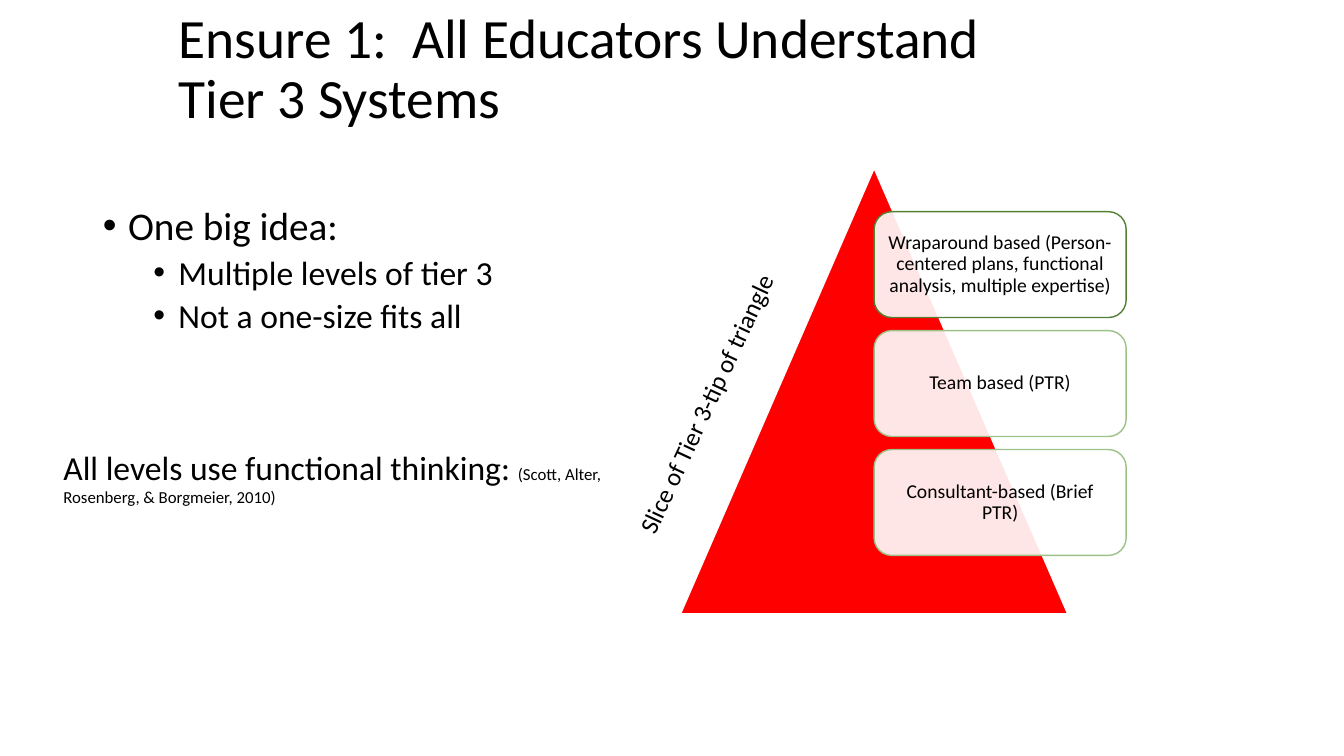
import lxml.etree
import pptx
import pptx.util
import pptx.dml.color
import pptx.enum.shapes
import pptx.enum.text
import pptx.oxml.ns

Inches, Pt = pptx.util.Inches, pptx.util.Pt
RGBColor = pptx.dml.color.RGBColor
Shape = pptx.enum.shapes.MSO_SHAPE
Anchor = pptx.enum.text.MSO_ANCHOR
Align = pptx.enum.text.PP_ALIGN
Fit = pptx.enum.text.MSO_AUTO_SIZE
qn = pptx.oxml.ns.qn

BLACK = RGBColor(0, 0, 0)
WHITE = RGBColor(255, 255, 255)
RED = RGBColor(255, 0, 0)
DARK = RGBColor(0x53, 0x80, 0x35)
LIGHT = RGBColor(0x9C, 0xC1, 0x89)

POINTS = [("One big idea:", 0), ("Multiple levels of tier 3", 1),
          ("Not a one-size fits all", 1)]
TIERS = [("Wraparound based (Person-centered plans, functional analysis, "
          "multiple expertise)", DARK),
         ("Team based (PTR)", LIGHT),
         ("Consultant-based (Brief PTR)", LIGHT)]


def place(shape, box):
    shape.left, shape.top, shape.width, shape.height = map(Inches, box)


def dress(run, size):
    run.font.name = "Calibri"
    run.font.size = Pt(size)
    run.font.color.rgb = BLACK


def style(para, size):
    para.line_spacing = 0.9
    for run in para.runs:
        dress(run, size)


def bullet(para, left):
    props = para._p.get_or_add_pPr()
    props.set("marL", str(Inches(left)))
    props.set("indent", str(Inches(-0.25)))
    lxml.etree.SubElement(props, qn("a:buFont"), typeface="Arial")
    lxml.etree.SubElement(props, qn("a:buChar"), char="•")


def add_title(slide, box):
    title = slide.shapes.title
    place(title, box)
    frame = title.text_frame
    frame.text = "Ensure 1:  All Educators Understand Tier 3 Systems"
    frame.auto_size = Fit.NONE
    frame.vertical_anchor = Anchor.MIDDLE
    para = frame.paragraphs[0]
    para.alignment = Align.LEFT
    style(para, 39.6)


def add_list(slide, box):
    body = slide.placeholders[1]
    place(body, box)
    frame = body.text_frame
    frame.text = "\n".join(text for text, _ in POINTS)
    frame.auto_size = Fit.NONE
    for para, (_, level) in zip(frame.paragraphs, POINTS):
        para.level = level
        para.space_before = Pt(5 if level else 10)
        style(para, 24 if level else 28)
        bullet(para, 0.25 + 0.5 * level)


def add_form(slide, kind, box, fill, line):
    form = slide.shapes.add_shape(kind, *map(Inches, box))
    form.shadow.inherit = False
    form.fill.solid()
    form.fill.fore_color.rgb = fill
    form.line.color.rgb = line
    form.line.width = Pt(1)
    return form


def add_tier(slide, box, text, line):
    tier = add_form(slide, Shape.ROUNDED_RECTANGLE, box, WHITE, line)
    # Let the triangle show faintly through the card
    fill = tier._element.spPr.find(qn("a:solidFill"))
    lxml.etree.SubElement(fill[0], qn("a:alpha"), val="90000")
    frame = tier.text_frame
    frame.text = text
    frame.word_wrap = True
    frame.vertical_anchor = Anchor.MIDDLE
    frame.margin_left = frame.margin_right = Inches(0.08)
    frame.margin_top = frame.margin_bottom = Inches(0.08)
    para = frame.paragraphs[0]
    para.alignment = Align.CENTER
    style(para, 14)


def add_peak(slide, box):
    left, top, width, height = box
    add_form(slide, Shape.ISOSCELES_TRIANGLE, box, RED, WHITE)
    # Cards start at the middle of the triangle
    for row, (text, line) in enumerate(TIERS):
        card = (left + width / 2, top + 0.43 + row * 1.18, 2.5, 1.05)
        add_tier(slide, card, text, line)


def add_note(slide, box, parts, turn=0):
    note = slide.shapes.add_textbox(*map(Inches, box))
    note.rotation = turn
    frame = note.text_frame
    frame.word_wrap = True
    for text, size in parts:
        run = frame.paragraphs[0].add_run()
        run.text = text
        dress(run, size)


def main():
    deck = pptx.Presentation()
    deck.slide_width, deck.slide_height = Inches(13.33), Inches(7.5)
    slide = deck.slides.add_slide(deck.slide_layouts[1])
    add_list(slide, (0.92, 2, 5.67, 4.76))
    add_peak(slide, (6.75, 1.67, 3.84, 4.42))
    add_title(slide, (1.67, 0.16, 9, 1.08))
    # Label along the triangle's left edge
    add_note(slide, (5.18, 3.3, 4.11, 0.4),
             [("Slice of Tier 3-tip of triangle", 18)], 295)
    # Statement with its citation
    add_note(slide, (0.53, 4.38, 5.55, 0.71),
             [("All levels use functional thinking: ", 24),
              ("(Scott, Alter, Rosenberg, & Borgmeier, 2010)", 12)])
    deck.save("out.pptx")


if __name__ == "__main__":
    main()
